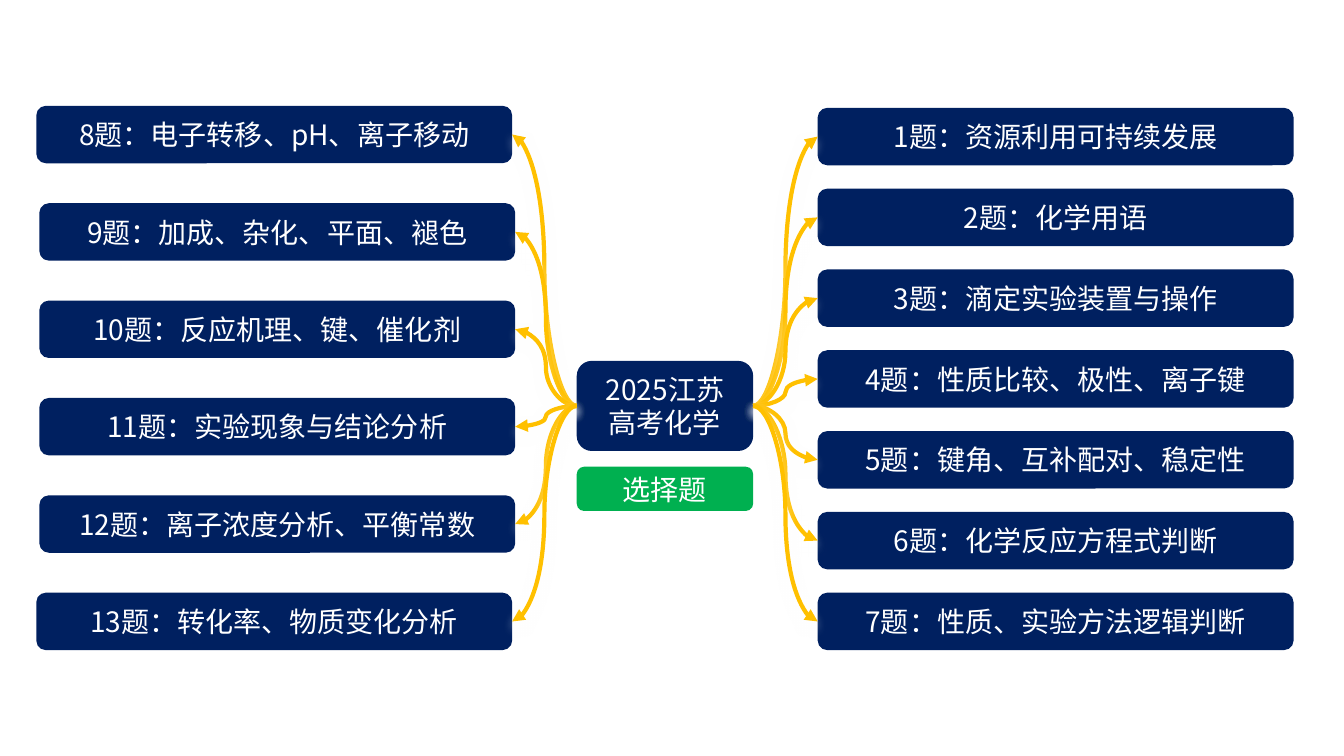
from pptx import Presentation
from pptx.dml.color import RGBColor
from pptx.enum.shapes import MSO_CONNECTOR as Link, MSO_SHAPE as Preset
from pptx.enum.text import MSO_ANCHOR as Anchor, PP_ALIGN as Align
from pptx.oxml import parse_xml
from pptx.oxml.ns import nsdecls, qn
from pptx.util import Inches, Pt

FONT = "Noto Sans CJK SC"
NAVY, GREEN, GOLD, WHITE = "002060", "00B050", "FFC000", "FFFFFF"
TOPIC_WIDTH, TOPIC_HEIGHT = 4.72, 0.57
LEFT_SITE, RIGHT_SITE = 1, 3

LEFT_TOPICS = [
    "8题：电子转移、pH、离子移动",
    "9题：加成、杂化、平面、褪色",
    "10题：反应机理、键、催化剂",
    "11题：实验现象与结论分析",
    "12题：离子浓度分析、平衡常数",
    "13题：转化率、物质变化分析",
]
RIGHT_TOPICS = [
    "1题：资源利用可持续发展",
    "2题：化学用语",
    "3题：滴定实验装置与操作",
    "4题：性质比较、极性、离子键",
    "5题：键角、互补配对、稳定性",
    "6题：化学反应方程式判断",
    "7题：性质、实验方法逻辑判断",
]


def colour(value):
    return RGBColor.from_string(value)


def add_label(page, box, lines, fill):
    label = page.shapes.add_shape(Preset.ROUNDED_RECTANGLE, *map(Inches, box))
    label.shadow.inherit = False
    label.fill.solid()
    label.fill.fore_color.rgb = colour(fill)
    label.line.fill.background()
    frame = label.text_frame
    frame.word_wrap = True
    frame.vertical_anchor = Anchor.MIDDLE
    for index, line in enumerate(lines):
        para = frame.add_paragraph() if index else frame.paragraphs[0]
        para.alignment = Align.CENTER
        span = para.add_run()
        span.text = line
        for name, value in {"size": Pt(20), "name": FONT}.items():
            setattr(span.font, name, value)
        span.font.color.rgb = colour(WHITE)
        east_asian = parse_xml(f'<a:ea {nsdecls("a")} typeface="{FONT}"/>')
        span.font._element.find(qn("a:latin")).addnext(east_asian)
    return label


def add_branch(page, hub, hub_site, topic, topic_site):
    branch = page.shapes.add_connector(Link.CURVE, 0, 0, 0, 0)
    branch.begin_connect(hub, hub_site)
    branch.end_connect(topic, topic_site)
    branch.line.color.rgb = colour(GOLD)
    branch.line.width = Pt(3)
    branch.line._get_or_add_ln().append(
        parse_xml(f'<a:tailEnd {nsdecls("a")} type="triangle"/>'))
    branch._element.spPr.append(parse_xml(
        f'<a:effectLst {nsdecls("a")}>'
        f'<a:outerShdw blurRad="{Pt(8)}" dist="{Pt(4)}" dir="5400000" rotWithShape="0">'
        f'<a:srgbClr val="{WHITE}"><a:alpha val="60000"/></a:srgbClr>'
        '</a:outerShdw></a:effectLst>'))


def add_hub(page, box):
    left, top, width, height = box
    hub = add_label(page, (left, top, width, 0.6 * height),
                    ["2025江苏", "高考化学"], NAVY)
    add_label(page, (left, top + 0.705 * height, width, 0.295 * height),
              ["选择题"], GREEN)
    return hub


def add_topics(page, box, topics, hub, hub_site, topic_site, inner_shift=0):
    left, top, width, height = box
    last = len(topics) - 1
    pitch = (height - TOPIC_HEIGHT) / last
    labels = []
    for row, topic in enumerate(topics):
        shift = inner_shift if 0 < row < last else 0
        place = left + shift, top + row * pitch, width, TOPIC_HEIGHT
        labels.append(add_label(page, place, [topic], NAVY))
    for label in labels:
        add_branch(page, hub, hub_site, label, topic_site)


def build_map(page):
    hub = add_hub(page, (5.72, 3.58, 1.75, 1.49))
    add_topics(page, (0.36, 1.05, TOPIC_WIDTH, 5.4), LEFT_TOPICS,
               hub, LEFT_SITE, RIGHT_SITE, inner_shift=0.03)
    add_topics(page, (8.11, 1.07, TOPIC_WIDTH, 5.38), RIGHT_TOPICS,
               hub, RIGHT_SITE, LEFT_SITE)


def main():
    deck = Presentation()
    deck.slide_width, deck.slide_height = Inches(13.33), Inches(7.5)
    page = deck.slides.add_slide(deck.slide_layouts[6])
    build_map(page)
    deck.save("out.pptx")


if __name__ == "__main__":
    main()
